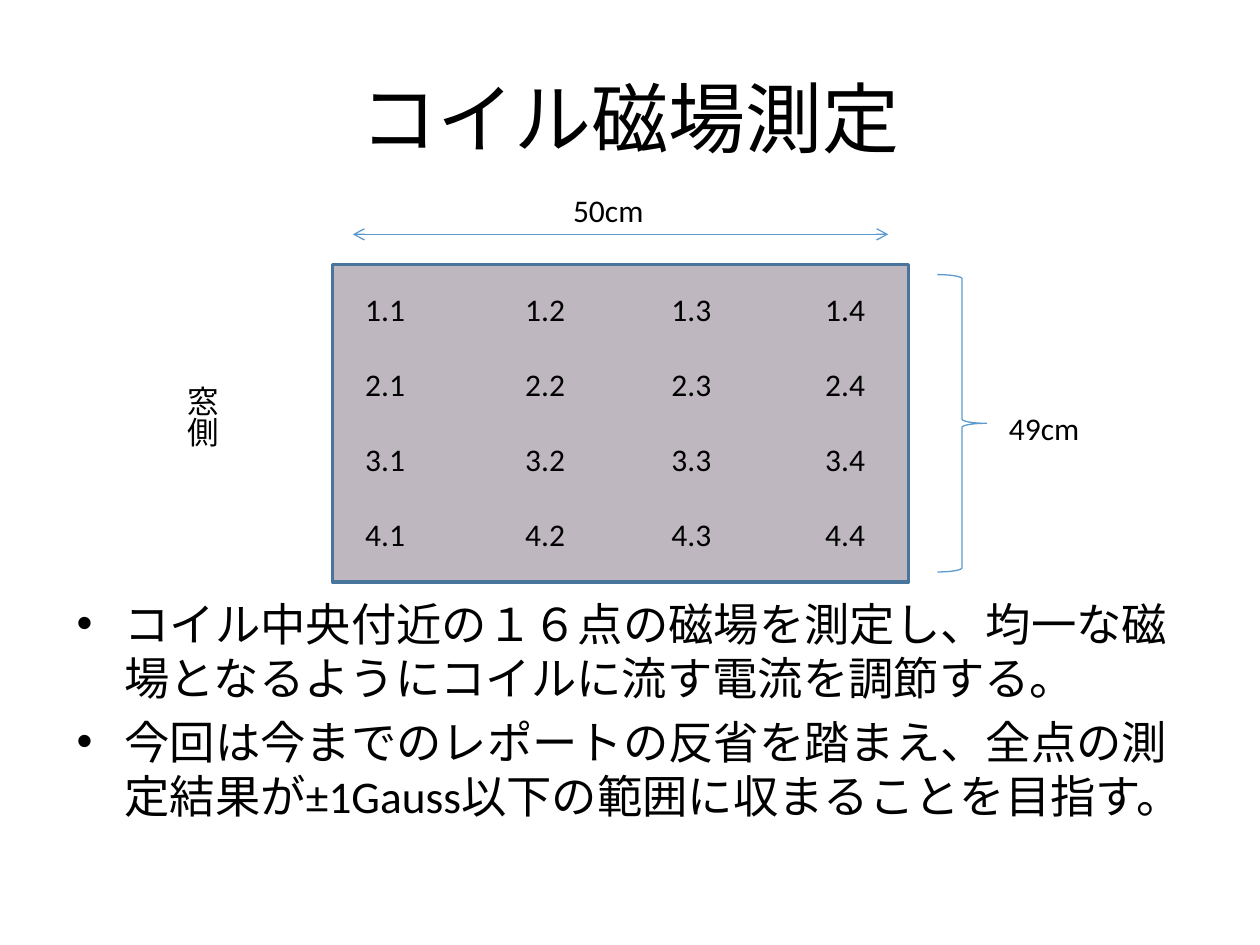
from dataclasses import dataclass
from typing import NamedTuple

import pptx
import pptx.dml.color
import pptx.enum.dml
import pptx.enum.lang
import pptx.enum.shapes
import pptx.enum.text
import pptx.oxml
import pptx.oxml.ns
import pptx.util
from pptx.util import Inches, Pt

ANCHOR = pptx.enum.text.MSO_ANCHOR
ALIGN = pptx.enum.text.PP_ALIGN
AUTO_SIZE = pptx.enum.text.MSO_AUTO_SIZE
SHAPE = pptx.enum.shapes.MSO_SHAPE
NS = pptx.oxml.ns.nsdecls("a")


@dataclass(frozen=True)
class Theme:
    font: str = "Calibri"
    text: str = "000000"
    coil_fill: str = "78697B"
    coil_edge: str = "49749B"
    dimension: str = "5D9ACF"
    title_size: float = 44
    body_size: float = 25.9
    label_size: float = 18


class Box(NamedTuple):
    left: float
    top: float
    width: float
    height: float

    def emu(self) -> list[int]:
        return [Inches(length) for length in self]


class Label(NamedTuple):
    text: str
    box: Box
    vertical: bool = False


THEME = Theme()
TITLE_BOX = Box(0.5, 0.3, 9, 1.25)
COIL_BOX = Box(2.64, 2.1, 4.57, 2.52)
POINTS_BOX = Box(2.8, 2.25, 4.25, 2.22)
BRACE_BOX = Box(7.44, 2.18, 0.39, 2.36)
BODY_BOX = Box(0.51, 4.68, 9, 2.05)
WIDTH_LINE_Y = 1.86
POINT_TABS = (1.27, 2.43, 3.65)
GRID_SIZE = 4
LABELS = (
    Label("窓側", Box(1.3, 2.96, 0.5, 0.61), vertical=True),
    Label("49cm", Box(7.91, 3.2, 0.77, 0.4)),
    Label("50cm", Box(4.45, 1.47, 0.77, 0.4)),
)
BULLETS = (
    "コイル中央付近の１６点の磁場を測定し、均一な磁場となるようにコイルに流す電流を調節する。",
    "今回は今までのレポートの反省を踏まえ、全点の測定結果が±1Gauss以下の範囲に収まることを目指す。",
)


def rgb(value: str) -> pptx.dml.color.RGBColor:
    return pptx.dml.color.RGBColor.from_string(value)


def element(xml: str):
    """Parse a drawing element whose opening tag holds a {ns} mark."""
    return pptx.oxml.parse_xml(xml.replace("{ns}", NS))


def write(frame, *lines: str, size: float, align=None, gap: float = 0,
          spacing=None, bullet: bool = False, tabs: tuple = ()) -> None:
    """Fill a text frame with one paragraph a line, gap points apart."""
    for index, line in enumerate(lines):
        paragraph = frame.add_paragraph() if index else frame.paragraphs[0]
        properties = paragraph._p.get_or_add_pPr()
        if bullet:
            properties.set("marL", str(Inches(0.38)))
            properties.set("indent", str(Inches(-0.38)))
            properties.append(element('<a:buFont {ns} typeface="Arial"/>'))
            properties.append(element('<a:buChar {ns} char="•"/>'))
        if tabs:
            stops = "".join(f'<a:tab pos="{Inches(stop)}" algn="l"/>' for stop in tabs)
            properties.append(element(f"<a:tabLst {{ns}}>{stops}</a:tabLst>"))
        if align is not None:
            paragraph.alignment = align
        if spacing is not None:
            paragraph.line_spacing = spacing
        if index and gap:
            paragraph.space_before = Pt(gap)
        run = paragraph.add_run()
        run.text = line
        run.font.name = THEME.font
        run.font.size = Pt(size)
        run.font.color.rgb = rgb(THEME.text)
        run.font.language_id = pptx.enum.lang.MSO_LANGUAGE_ID.JAPANESE


def add_text_frame(slide, box: Box, wrap: bool = True):
    frame = slide.shapes.add_textbox(*box.emu()).text_frame
    frame.word_wrap = wrap
    return frame


def add_title(slide, text: str) -> None:
    title = slide.shapes.title
    title.left, title.top, title.width, title.height = TITLE_BOX.emu()
    title.text_frame.vertical_anchor = ANCHOR.MIDDLE
    write(title.text_frame, text, size=THEME.title_size, align=ALIGN.CENTER)


def add_coil(slide) -> None:
    coil = slide.shapes.add_shape(SHAPE.RECTANGLE, *COIL_BOX.emu())
    coil.shadow.inherit = False
    coil.fill.solid()
    coil.fill.fore_color.rgb = rgb(THEME.coil_fill)
    color = coil.fill._xPr.find(".//" + pptx.oxml.ns.qn("a:srgbClr"))
    color.append(element('<a:alpha {ns} val="48000"/>'))
    coil.line.color.rgb = rgb(THEME.coil_edge)
    coil.line.width = Pt(2)


def add_measuring_points(slide) -> None:
    numbers = range(1, GRID_SIZE + 1)
    rows = ["\t".join(f"{row}.{column}" for column in numbers) for row in numbers]
    write(add_text_frame(slide, POINTS_BOX), *rows,
          size=THEME.label_size, gap=21.4, tabs=POINT_TABS)


def add_label(slide, label: Label) -> None:
    frame = add_text_frame(slide, label.box, wrap=False)
    frame.auto_size = AUTO_SIZE.SHAPE_TO_FIT_TEXT
    if label.vertical:
        frame._txBody.bodyPr.set("vert", "eaVert")
    write(frame, label.text, size=THEME.label_size)


def add_height_brace(slide) -> None:
    brace = slide.shapes.add_shape(SHAPE.RIGHT_BRACE, *BRACE_BOX.emu())
    brace.shadow.inherit = False
    brace.fill.background()
    brace.line.color.rgb = rgb(THEME.dimension)
    brace.line.width = Pt(0.75)


def add_width_arrow(slide) -> None:
    start, end = POINTS_BOX.left, POINTS_BOX.left + POINTS_BOX.width
    arrow = slide.shapes.add_connector(
        pptx.enum.shapes.MSO_CONNECTOR.STRAIGHT,
        Inches(start), Inches(WIDTH_LINE_Y), Inches(end), Inches(WIDTH_LINE_Y))
    arrow.line.color.rgb = rgb(THEME.dimension)
    arrow.line.width = Pt(0.75)
    for tip in ("headEnd", "tailEnd"):
        arrow.line._get_or_add_ln().append(element(f'<a:{tip} {{ns}} type="arrow"/>'))
    arrow._element.spPr.append(element("<a:effectLst {ns}/>"))


def main() -> None:
    presentation = pptx.Presentation()
    presentation.slide_width, presentation.slide_height = Inches(10), Inches(7.5)
    slide = presentation.slides.add_slide(presentation.slide_layouts[5])
    add_title(slide, "コイル磁場測定")
    write(add_text_frame(slide, BODY_BOX), *BULLETS, size=THEME.body_size,
          gap=5.5, spacing=Pt(31), bullet=True)
    add_coil(slide)
    add_measuring_points(slide)
    add_height_brace(slide)
    add_width_arrow(slide)
    for label in LABELS:
        add_label(slide, label)
    presentation.save("out.pptx")


if __name__ == "__main__":
    main()
